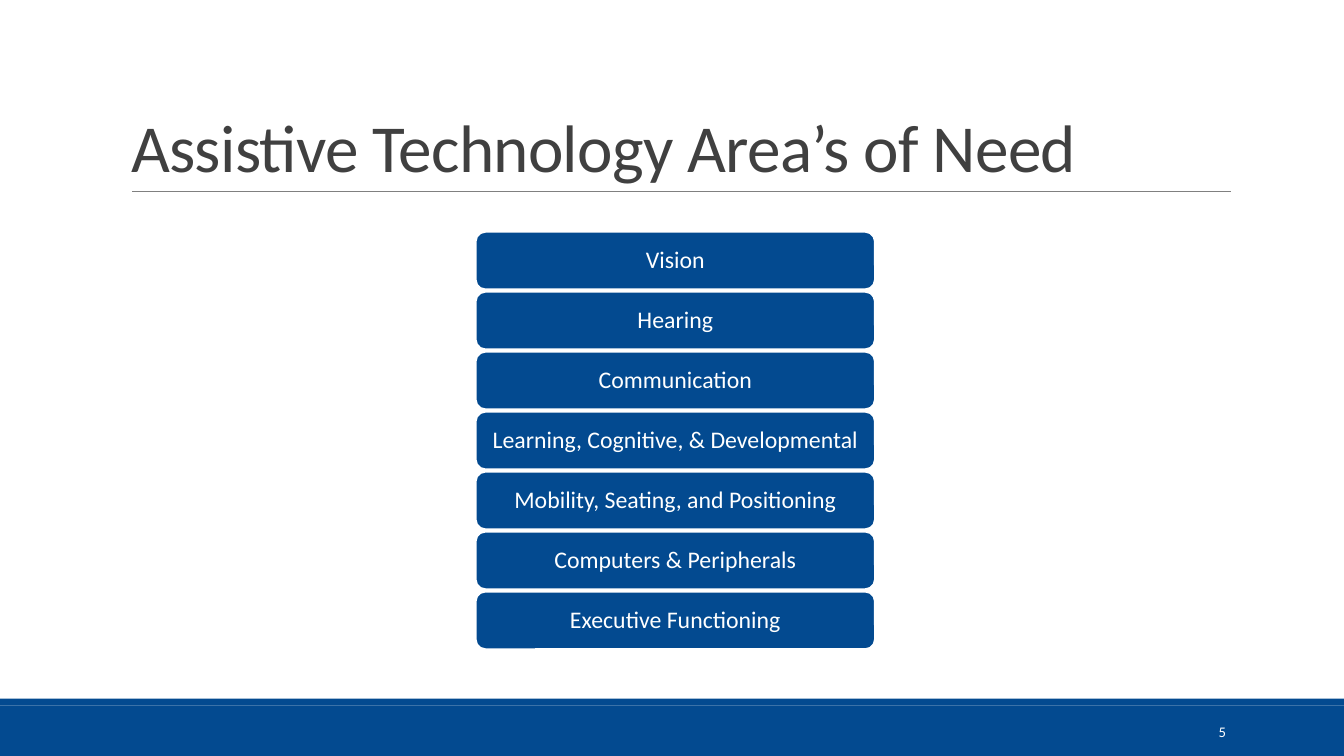
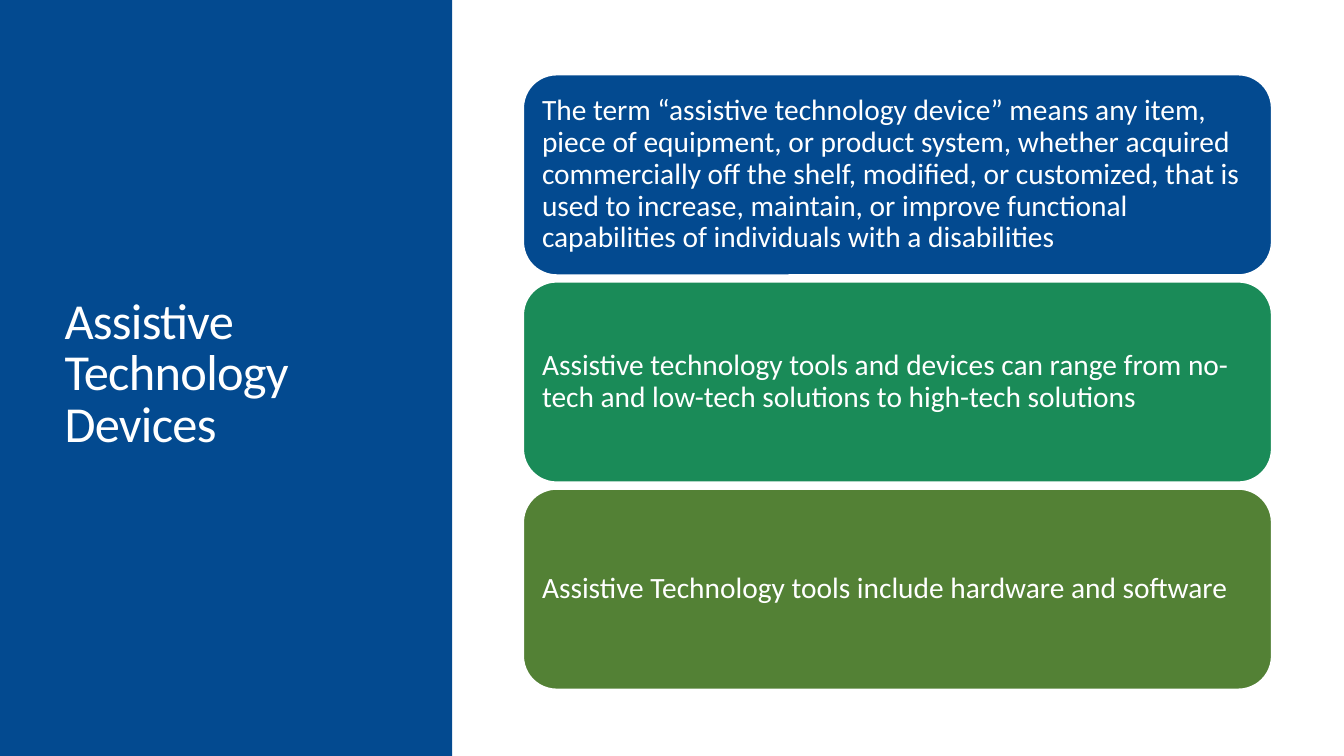
"""Build two slides on assistive technology: areas of need, and devices."""
from dataclasses import dataclass

from lxml import etree
from pptx import Presentation
from pptx.dml.color import RGBColor
from pptx.enum.shapes import MSO_CONNECTOR, MSO_SHAPE
from pptx.enum.text import MSO_ANCHOR, MSO_AUTO_SIZE, PP_ALIGN
from pptx.oxml.ns import qn
from pptx.shapes.autoshape import Shape
from pptx.slide import Slide
from pptx.util import Inches, Pt

RECTANGLE = MSO_SHAPE.RECTANGLE
ROUNDED = MSO_SHAPE.ROUNDED_RECTANGLE
STRAIGHT = MSO_CONNECTOR.STRAIGHT
BOTTOM, MIDDLE = MSO_ANCHOR.BOTTOM, MSO_ANCHOR.MIDDLE
LEFT, CENTER, RIGHT = PP_ALIGN.LEFT, PP_ALIGN.CENTER, PP_ALIGN.RIGHT
NO_AUTOFIT = MSO_AUTO_SIZE.NONE

BLUE = RGBColor(0x03, 0x4A, 0x90)
GREEN = RGBColor(0x1A, 0x8B, 0x58)
OLIVE = RGBColor(0x53, 0x81, 0x35)
GRAY = RGBColor(0x80, 0x80, 0x80)
DARK = RGBColor(0x40, 0x40, 0x40)
WHITE = RGBColor(0xFF, 0xFF, 0xFF)

FONT = "Calibri"
SLIDE_WIDTH = Inches(40 / 3)
SLIDE_HEIGHT = Inches(7.5)
TITLE_ONLY = 5


@dataclass(frozen=True)
class Box:
    """A rectangle in percent of the slide's width and height."""
    left: float
    top: float
    width: float
    height: float

    def place(self) -> tuple[int, int, int, int]:
        """Return left, top, width and height as slide lengths."""
        return (across(self.left), down(self.top),
                across(self.width), down(self.height))


@dataclass(frozen=True)
class TextStyle:
    """How one block of text looks."""
    size: float
    color: RGBColor = WHITE
    align: PP_ALIGN = LEFT
    anchor: MSO_ANCHOR = MIDDLE
    line_spacing: float = 1.0
    side_margin: float = 0.1
    end_margin: float = 0.05
    tracking: int = 0


@dataclass(frozen=True)
class Card:
    """One rounded box of a stack."""
    text: str
    color: RGBColor = BLUE


AREA_TITLE = TextStyle(48, DARK, anchor=BOTTOM, line_spacing=0.85, tracking=-50)
DEVICE_TITLE = TextStyle(36, line_spacing=0.85, tracking=-50)
PAGE_NUMBER = TextStyle(10.5, align=RIGHT)
AREA_TEXT = TextStyle(17, align=CENTER, line_spacing=0.9,
                      side_margin=0.07, end_margin=0.04)
DEVICE_TEXT = TextStyle(21, line_spacing=0.9, side_margin=0.09, end_margin=0.09)

FOOTER_BANDS = [Box(0, 93.33, 100, 6.67), Box(0, 92.4, 100, 0.93)]
AREAS = [
    Card("Vision"),
    Card("Hearing"),
    Card("Communication"),
    Card("Learning, Cognitive, & Developmental"),
    Card("Mobility, Seating, and Positioning"),
    Card("Computers & Peripherals"),
    Card("Executive Functioning"),
]
DEVICES = [
    Card("The term “assistive technology device” means any item, piece of "
         "equipment, or product system, whether acquired commercially off the "
         "shelf, modified, or customized, that is used to increase, maintain, "
         "or improve functional capabilities of individuals with a disabilities"),
    Card("Assistive technology tools and devices can range from no-tech and "
         "low-tech solutions to high-tech solutions", GREEN),
    Card("Assistive Technology tools include hardware and software", OLIVE),
]


def across(percent: float) -> int:
    """Turn a share of the slide's width into a length."""
    return round(SLIDE_WIDTH * percent / 100)


def down(percent: float) -> int:
    """Turn a share of the slide's height into a length."""
    return round(SLIDE_HEIGHT * percent / 100)


def write(shape: Shape, text: str, style: TextStyle) -> None:
    """Put styled text into a shape."""
    frame = shape.text_frame
    side, end = Inches(style.side_margin), Inches(style.end_margin)
    frame_format = {
        "word_wrap": True, "auto_size": NO_AUTOFIT,
        "vertical_anchor": style.anchor,
        "margin_left": side, "margin_right": side,
        "margin_top": end, "margin_bottom": end,
    }
    for name, value in frame_format.items():
        setattr(frame, name, value)
    paragraph = frame.paragraphs[0]
    paragraph.alignment = style.align
    paragraph.line_spacing = style.line_spacing
    run = paragraph.add_run()
    run.text = text
    for name, value in {"name": FONT, "size": Pt(style.size)}.items():
        setattr(run.font, name, value)
    run.font.color.rgb = style.color
    if style.tracking:
        run.font._element.set("spc", str(style.tracking))


def add_block(slide: Slide, kind: MSO_SHAPE, box: Box, color: RGBColor) -> Shape:
    """Draw a plain filled shape without outline or shadow."""
    shape = slide.shapes.add_shape(kind, *box.place())
    shape.shadow.inherit = False
    shape.fill.solid()
    shape.fill.fore_color.rgb = color
    shape.line.fill.background()
    return shape


def add_title(slide: Slide, text: str, box: Box, style: TextStyle) -> None:
    """Move, format and bring forward the title placeholder."""
    title = slide.shapes.title
    title.left, title.top, title.width, title.height = box.place()
    write(title, text, style)
    slide.shapes._spTree.append(title._element)


def add_rule(slide: Slide, left: float, right: float, top: float) -> None:
    """Draw the thin line under a title."""
    rule = slide.shapes.add_connector(
        STRAIGHT, across(left), down(top), across(right), down(top))
    rule.line.color.rgb = GRAY
    rule.line.width = Pt(0.5)
    etree.SubElement(rule._element.spPr, qn("a:effectLst"))


def add_stack(slide: Slide, cards: list[Card], area: Box, card_height: float,
              style: TextStyle) -> None:
    """Spread cards evenly from the top to the bottom of an area."""
    pitch = (area.height - card_height) / (len(cards) - 1)
    for row, card in enumerate(cards):
        box = Box(area.left, area.top + row * pitch, area.width, card_height)
        shape = add_block(slide, ROUNDED, box, card.color)
        shape.line.color.rgb = WHITE
        shape.line.width = Pt(1.25)
        write(shape, card.text, style)


def build_areas(slide: Slide) -> None:
    """Lay out the slide that lists the areas of need."""
    for band in FOOTER_BANDS:
        add_block(slide, RECTANGLE, band, BLUE)
    add_rule(slide, 9.83, 91.58, 25.33)
    add_title(slide, "Assistive Technology Area’s of Need",
              Box(9, 4.13, 82.5, 21.2), AREA_TITLE)
    number = slide.shapes.add_textbox(*Box(81.23, 94.13, 10.73, 5.33).place())
    write(number, "5", PAGE_NUMBER)
    add_stack(slide, AREAS, Box(35.4, 30.67, 29.7, 55.2), 7.6, AREA_TEXT)


def build_devices(slide: Slide) -> None:
    """Lay out the slide that explains devices beside a title panel."""
    add_block(slide, RECTANGLE, Box(0, 0, 33.65, 100), BLUE)
    add_title(slide, "Assistive Technology Devices",
              Box(4.05, 7.6, 25.28, 84.13), DEVICE_TITLE)
    add_stack(slide, DEVICES, Box(38.93, 9.87, 55.7, 81.33), 26.53, DEVICE_TEXT)


def main() -> None:
    """Build and save the presentation."""
    presentation = Presentation()
    presentation.slide_width = SLIDE_WIDTH
    presentation.slide_height = SLIDE_HEIGHT
    for build in (build_areas, build_devices):
        build(presentation.slides.add_slide(presentation.slide_layouts[TITLE_ONLY]))
    presentation.save("out.pptx")


if __name__ == "__main__":
    main()
